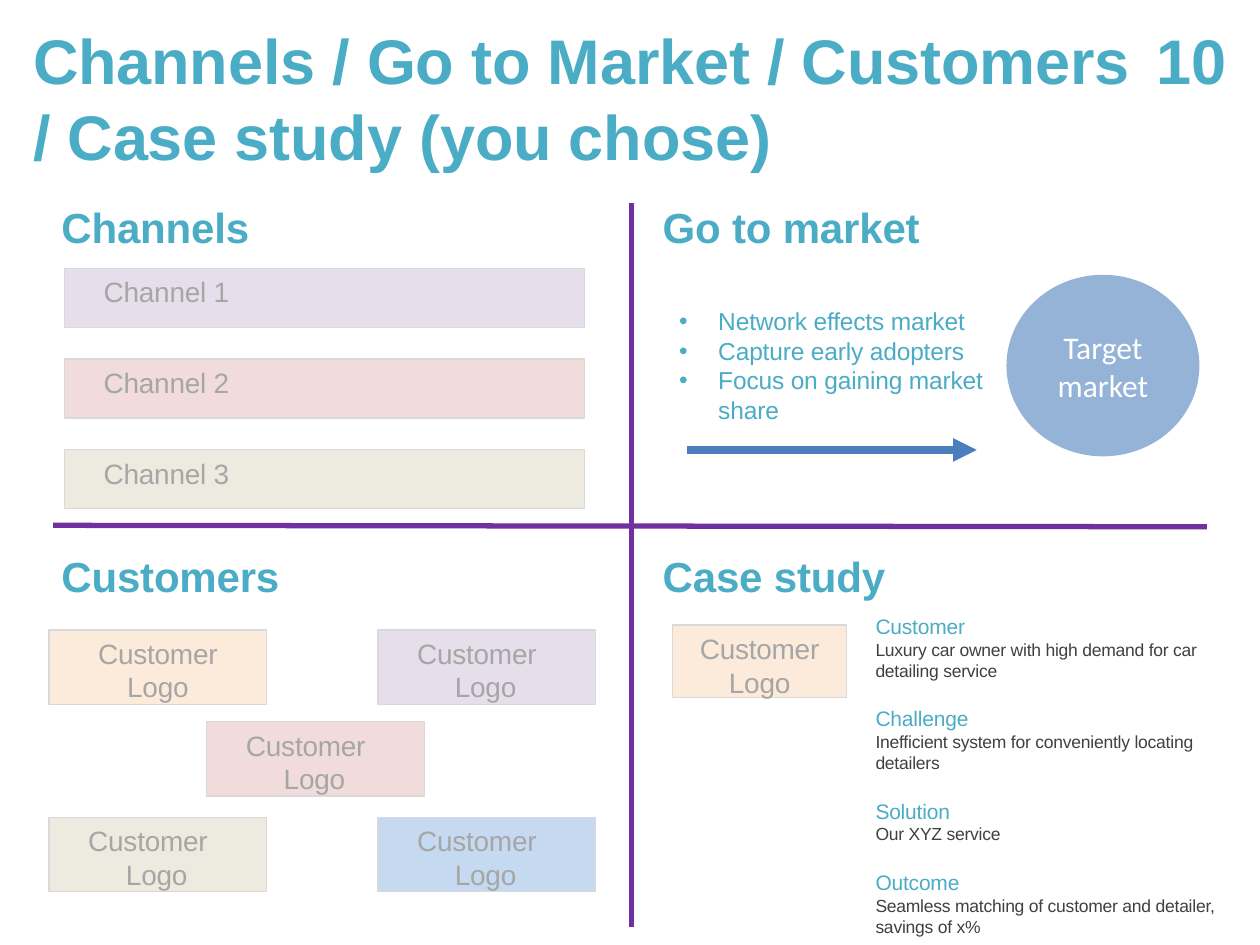
import pptx
import pptx.dml.color
import pptx.enum.shapes
import pptx.enum.text
import pptx.oxml
import pptx.oxml.ns
import pptx.util
from pptx.util import Cm

TEAL, GREY, DARK, PURPLE = "4AACC5", "A6A6A6", "404040", "7030A0"
LILAC, ROSE, SAND, PEACH, SKY = "E6DFEB", "F1DCDB", "EDEBE0", "FCEADA", "C5D9F0"
CENTER = pptx.enum.text.PP_ALIGN.CENTER
MIDDLE = pptx.enum.text.MSO_ANCHOR.MIDDLE
RECTANGLE = pptx.enum.shapes.MSO_SHAPE.RECTANGLE
OVAL = pptx.enum.shapes.MSO_SHAPE.OVAL


def color(hex_string):
    return pptx.dml.color.RGBColor.from_string(hex_string)


def add_xml(parent, tag, **attributes):
    element = pptx.oxml.parse_xml(f"<a:{tag} {pptx.oxml.ns.nsdecls('a')}/>")
    for name, value in attributes.items():
        element.set(name, str(value))
    parent.append(element)


def write(paragraph, text, size=16, ink=TEAL, font="Arial", bold=False, spacing=-10,
          align=None, before=0, margin=0, first=0, bullet=None):
    """Put formatted text in a paragraph; margin and first-line indent are in cm."""
    run = paragraph.add_run()
    run.text = text
    run.font.size = pptx.util.Pt(size)
    run.font.name = font
    run.font.bold = bold
    run.font.color.rgb = color(ink)
    run._r.get_or_add_rPr().set("spc", str(spacing))
    paragraph.alignment = align
    paragraph.space_before = pptx.util.Pt(before)
    properties = paragraph._p.get_or_add_pPr()
    properties.set("marL", str(Cm(margin)))
    properties.set("indent", str(Cm(first)))
    if bullet:
        add_xml(properties, "buFont", typeface="Arial")
        add_xml(properties, "buChar", char=bullet)


class Board:
    line_color = "D9D9D9"
    line_width = pptx.util.Pt(0.72)
    hanging = {"margin": 1.55, "first": -0.76}

    def __init__(self, slide):
        self.slide = slide

    def fill_frame(self, frame, paragraphs, anchor=None, insets=None):
        frame.word_wrap = True
        if anchor is not None:
            frame.vertical_anchor = anchor
        if insets is not None:
            frame.margin_left = frame.margin_right = frame.margin_bottom = 0
            frame.margin_top = Cm(insets)
        for index, (text, style) in enumerate(paragraphs):
            paragraph = frame.add_paragraph() if index else frame.paragraphs[0]
            write(paragraph, text, **style)

    def text(self, left, top, width, height, paragraphs, **frame_style):
        shape = self.slide.shapes.add_textbox(Cm(left), Cm(top), Cm(width), Cm(height))
        self.fill_frame(shape.text_frame, paragraphs, **frame_style)

    def shape(self, kind, left, top, width, height, fill, paragraphs, outline=True, **frame_style):
        shape = self.slide.shapes.add_shape(kind, Cm(left), Cm(top), Cm(width), Cm(height))
        shape.shadow.inherit = False
        shape.fill.solid()
        shape.fill.fore_color.rgb = color(fill)
        if outline:
            shape.line.color.rgb = color(self.line_color)
            shape.line.width = self.line_width
        else:
            shape.line.fill.background()
        frame_style.setdefault("anchor", pptx.enum.text.MSO_ANCHOR.TOP)
        self.fill_frame(shape.text_frame, paragraphs, **frame_style)

    def label_box(self, left, top, width, height, fill, text, centered=False):
        layout = {"align": CENTER} if centered else {"align": pptx.enum.text.PP_ALIGN.LEFT, **self.hanging}
        paragraphs = [(part, {"ink": GREY, "before": 0 if index else 3.2, **layout})
                      for index, part in enumerate(text.split("\n"))]
        self.shape(RECTANGLE, left, top, width, height, fill, paragraphs, insets=0.13)

    def line(self, start, end, ink, width, arrow=False):
        connector = self.slide.shapes.add_connector(
            pptx.enum.shapes.MSO_CONNECTOR.STRAIGHT, *map(Cm, start + end))
        connector.line.color.rgb = color(ink)
        connector.line.width = pptx.util.Pt(width)
        if arrow:
            add_xml(connector.line._get_or_add_ln(), "tailEnd", type="triangle")
        add_xml(connector._element.spPr, "effectLst")


def main():
    presentation = pptx.Presentation()
    presentation.slide_width, presentation.slide_height = Cm(25.4), Cm(19.05)
    board = Board(presentation.slides.add_slide(presentation.slide_layouts[6]))

    # Title and page number
    title_style = {"size": 36, "bold": True, "before": 1, "margin": 0.03}
    board.text(0.64, 0.41, 22.17, 3.12,
               [("Channels / Go to Market / Customers / Case study (you chose)", title_style)], insets=0.03)
    board.text(23.29, 0.41, 1.6, 1.57, [("10", {**title_style, "spacing": 0})], insets=0.03)

    # Quadrant headings
    headings = [["Channels", "Go to market"], ["Customers", "Case study"]]
    for top, row in zip((3.94, 10.97), headings):
        for left, heading in zip((0.99, 13.11), row):
            board.text(left, top, 6, 1.27, [(heading, {"size": 24, "bold": True})])

    # Channels
    for index, fill in enumerate((LILAC, ROSE, SAND)):
        board.label_box(1.3, 5.41 + 1.83 * index, 10.49, 1.19, fill, f"Channel {index + 1}")

    # Customers
    board.label_box(0.99, 12.7, 4.39, 1.5, PEACH, "Customer\nLogo", centered=True)
    for left, top, fill in ((7.62, 12.7, LILAC), (4.17, 14.55, ROSE),
                            (0.99, 16.48, SAND), (7.62, 16.48, SKY)):
        board.label_box(left, top, 4.39, 1.5, fill, "Customer Logo")

    # Go to market
    points = ("Network effects market", "Capture early adopters", "Focus on gaining market share")
    bullet_style = {"size": 14, "margin": 0.79, "first": -0.79, "bullet": "•"}
    board.text(13.44, 5.89, 6.71, 2.95, [(point, bullet_style) for point in points], anchor=MIDDLE)
    board.line((13.84, 9.07), (19.69, 9.07), "4B7EBC", 4.5, arrow=True)
    target_style = {"size": 18, "ink": "FFFFFF", "font": "Calibri", "spacing": 0, "align": CENTER}
    board.shape(OVAL, 20.29, 5.54, 3.89, 3.66, "95B3D7", [("Target market", target_style)],
                outline=False, anchor=MIDDLE)

    # Case study
    board.label_box(13.56, 12.6, 3.51, 1.47, PEACH, "Customer\nLogo", centered=True)
    story = {
        "Customer": "Luxury car owner with high demand for car detailing service",
        "Challenge": "Inefficient system for conveniently locating detailers",
        "Solution": "Our XYZ service",
        "Outcome": "Seamless matching of customer and detailer, savings of x%",
    }
    paragraphs = []
    for index, (heading, detail) in enumerate(story.items()):
        paragraphs.append((heading, {"size": 12, "before": 14.4 if index else 0}))
        paragraphs.append((detail, {"size": 10, "ink": DARK}))
    board.text(17.4, 12.24, 7.92, 6.83, paragraphs)

    # Quadrant dividers
    board.line((12.73, 4.09), (12.73, 18.69), PURPLE, 3)
    board.line((24.33, 10.62), (1.07, 10.59), PURPLE, 3)

    presentation.save("out.pptx")


if __name__ == "__main__":
    main()
